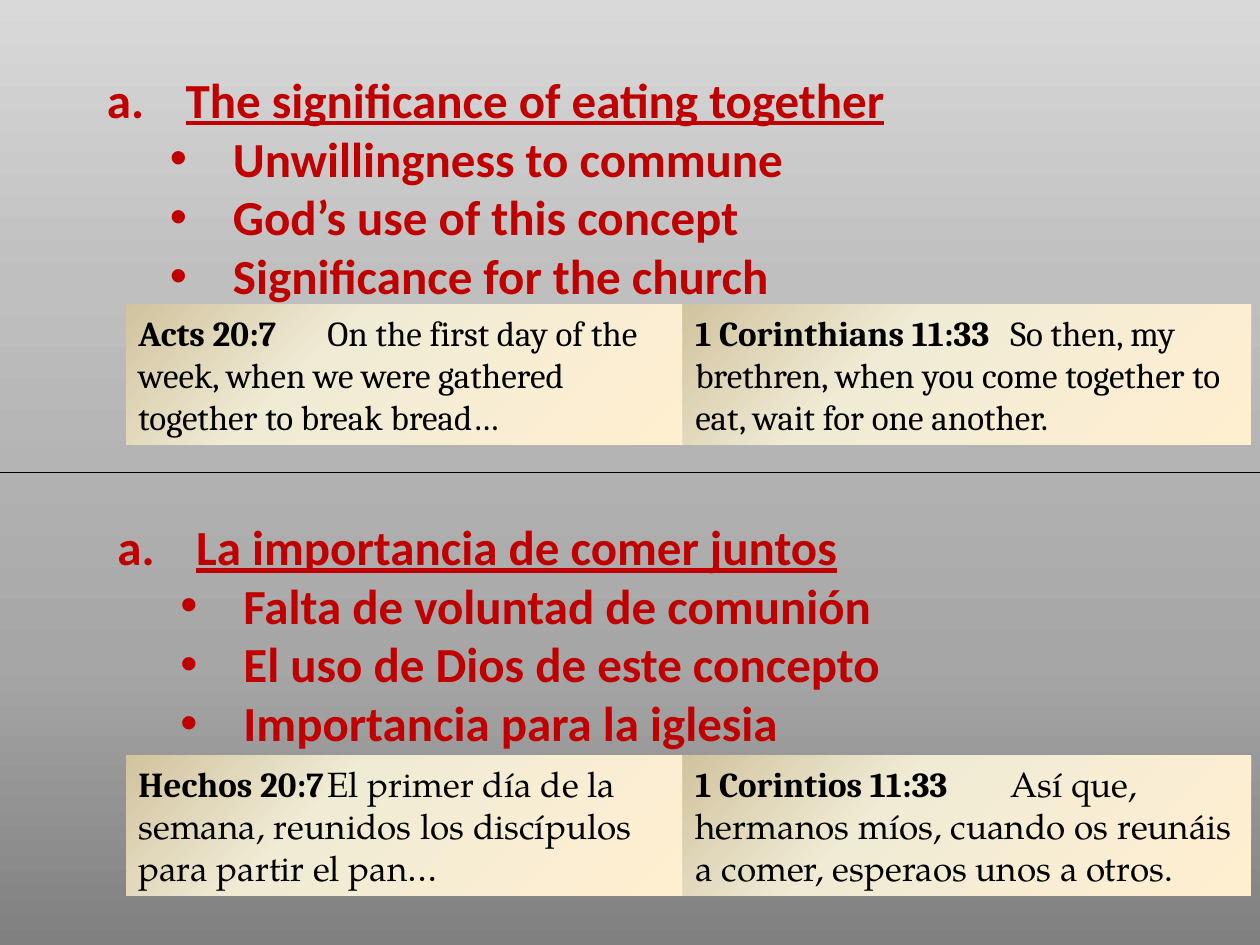
from lxml import etree
from pptx import Presentation
from pptx.dml.color import RGBColor
from pptx.enum import shapes, text
from pptx.oxml.ns import qn
from pptx.util import Pt

BACKGROUND = [(0, "D9D9D9"), (30, "BFBFBF"), (70, "A6A6A6"), (100, "808080")]
PARCHMENT = [(0, "FFEFD1"), (65, "F0EBD5"), (100, "D1C39F")]
RED, BLACK = "C00000", "000000"

HALVES = [
    {
        "outline_box": (54, 36, 624, 143),
        "passage_top": 174.25,
        "heading": "The significance of eating together",
        "points": ["Unwillingness to commune", "God’s use of this concept",
                   "Significance for the church"],
        "verse_font": "Cambria",
        "passages": [
            ("Acts 20:7", "On the first day of the week, when we were gathered "
                          "together to break bread…"),
            ("1 Corinthians 11:33", "So then, my brethren, when you come together "
                                    "to eat, wait for one another."),
        ],
    },
    {
        "outline_box": (60, 291.5, 624, 143),
        "passage_top": 432,
        "heading": "La importancia de comer juntos",
        "points": ["Falta de voluntad de comunión", "El uso de Dios de este concepto",
                   "Importancia para la iglesia"],
        "verse_font": "TeX Gyre Pagella",
        "passages": [
            ("Hechos 20:7", "El primer día de la semana, reunidos los discípulos "
                            "para partir el pan…"),
            ("1 Corintios 11:33", "Así que, hermanos míos, cuando os reunáis a comer, "
                                  "esperaos unos a otros."),
        ],
    },
]
PASSAGE_COLUMNS = [(72, 318.25), (390.25, 324.75)]
PASSAGE_HEIGHT = 80


def color(hex_value):
    return RGBColor.from_string(hex_value)


def set_gradient(fill, element, stops, clockwise_angle):
    """Fill with any number of stops; element is the XML that holds the fill."""
    fill.gradient()
    fill.gradient_angle = 360 - clockwise_angle
    stop_list = next(element.iter(qn("a:gsLst")))
    for old_stop in list(stop_list):
        stop_list.remove(old_stop)
    for percent, hex_value in stops:
        stop = etree.SubElement(stop_list, qn("a:gs"), pos=str(percent * 1000))
        etree.SubElement(stop, qn("a:srgbClr"), val=hex_value)


def add_run(paragraph, words, font, size, hex_value, bold=True, underline=False):
    run = paragraph.add_run()
    run.text = words
    run.font.name = font
    run.font.size = Pt(size)
    run.font.bold = bold
    run.font.underline = underline
    run.font.color.rgb = color(hex_value)


def set_marker(paragraph, left, hanging, tag, **attributes):
    """Give the paragraph a hanging indent and a bullet or number."""
    properties = paragraph._p.get_or_add_pPr()
    properties.set("marL", str(Pt(left)))
    properties.set("indent", str(-Pt(hanging)))
    if tag == "a:buChar":
        etree.SubElement(properties, qn("a:buFont"), typeface="Arial")
    etree.SubElement(properties, qn(tag), **attributes)


def add_passage(slide, box, reference, verse, verse_font):
    panel = slide.shapes.add_shape(shapes.MSO_SHAPE.RECTANGLE, *map(Pt, box))
    panel.shadow.inherit = False
    panel.line.fill.background()
    set_gradient(panel.fill, panel._element, PARCHMENT, 225)
    frame = panel.text_frame
    frame.word_wrap = True
    frame.auto_size = text.MSO_AUTO_SIZE.SHAPE_TO_FIT_TEXT
    frame.vertical_anchor = text.MSO_ANCHOR.TOP
    paragraph = frame.paragraphs[0]
    paragraph.alignment = text.PP_ALIGN.LEFT
    add_run(paragraph, reference + "\t", "Cambria", 20, BLACK)
    add_run(paragraph, verse, verse_font, 20, BLACK, bold=False)


def add_outline(slide, box, heading, points):
    frame = slide.shapes.add_textbox(*map(Pt, box)).text_frame
    frame.word_wrap = True
    frame.auto_size = text.MSO_AUTO_SIZE.SHAPE_TO_FIT_TEXT
    title = frame.paragraphs[0]
    set_marker(title, 45, 45, "a:buAutoNum", type="alphaLcPeriod")
    add_run(title, heading, "Calibri", 28, RED, underline=True)
    for point in points:
        paragraph = frame.add_paragraph()
        paragraph.level = 1
        set_marker(paragraph, 72, 36, "a:buChar", char="•")
        add_run(paragraph, point, "Calibri", 28, RED)


def add_half(slide, half):
    """Place one language: its two passages and its outline."""
    for (left, width), (reference, verse) in zip(PASSAGE_COLUMNS, half["passages"]):
        box = (left, half["passage_top"], width, PASSAGE_HEIGHT)
        add_passage(slide, box, reference, verse, half["verse_font"])
    add_outline(slide, half["outline_box"], half["heading"], half["points"])


def add_divider(slide, y, width):
    divider = slide.shapes.add_connector(
        shapes.MSO_CONNECTOR.STRAIGHT, Pt(0), Pt(y), Pt(width), Pt(y))
    divider.line.color.rgb = color(BLACK)
    divider.line.width = Pt(0.75)
    etree.SubElement(divider._element.spPr, qn("a:effectLst"))


def main():
    deck = Presentation()
    deck.slide_width, deck.slide_height = Pt(720), Pt(540)
    slide = deck.slides.add_slide(deck.slide_layouts[6])
    set_gradient(slide.background.fill, slide._element, BACKGROUND, 90)
    english, spanish = HALVES
    add_half(slide, english)
    add_divider(slide, 270, 720)
    add_half(slide, spanish)
    deck.save("out.pptx")


if __name__ == "__main__":
    main()
